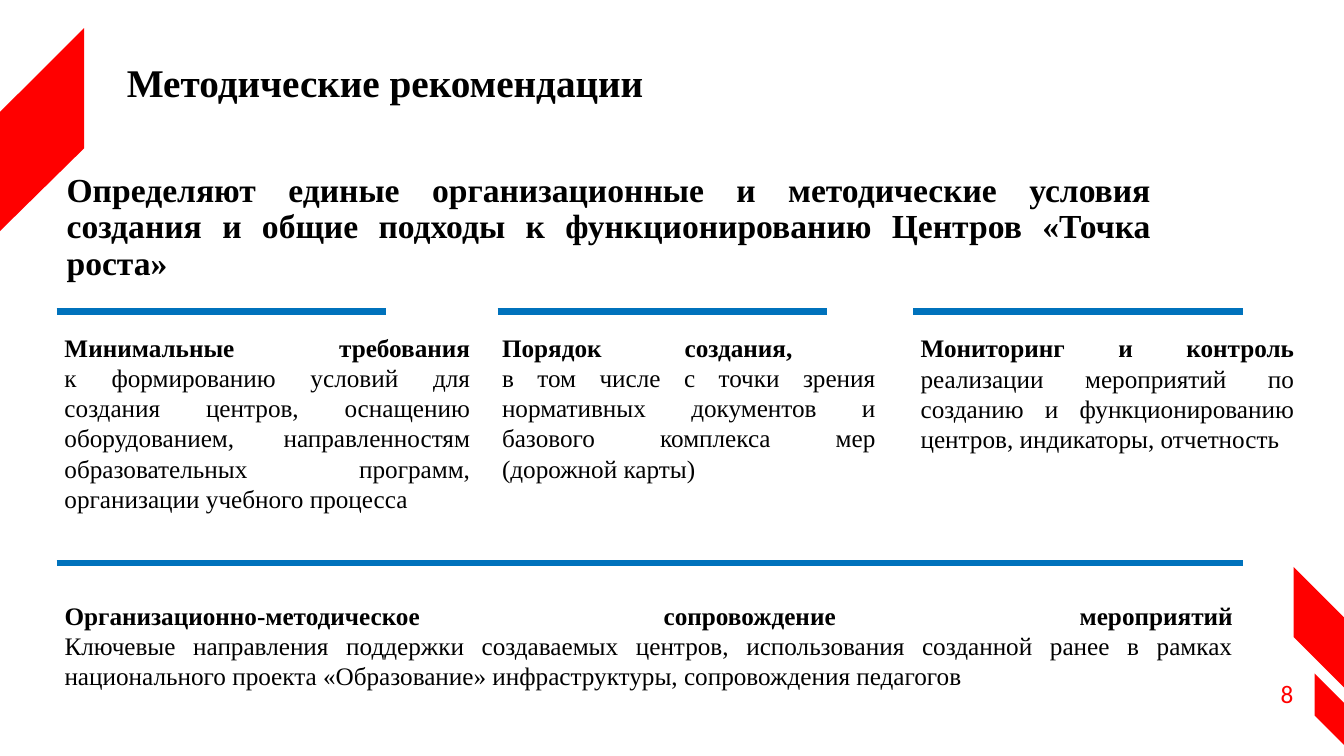
from dataclasses import dataclass

from lxml import etree
from pptx import Presentation
from pptx.dml.color import RGBColor
from pptx.enum.shapes import MSO_CONNECTOR
from pptx.enum.text import MSO_ANCHOR, PP_ALIGN
from pptx.oxml.ns import qn
from pptx.util import Pt

LEFT, RIGHT, JUSTIFY = PP_ALIGN.LEFT, PP_ALIGN.RIGHT, PP_ALIGN.JUSTIFY
TOP, MIDDLE = MSO_ANCHOR.TOP, MSO_ANCHOR.MIDDLE
STRAIGHT = MSO_CONNECTOR.STRAIGHT


@dataclass(frozen=True)
class Theme:
    ink: RGBColor = RGBColor(0, 0, 0)
    red: RGBColor = RGBColor(0xFF, 0, 0)
    blue: RGBColor = RGBColor(0x00, 0x72, 0xBC)
    serif: str = "Times New Roman"
    sans: str = "Calibri"
    title: float = 28
    lead: float = 24
    body: float = 18
    rule: float = 4.5


theme = Theme()

deck = Presentation()
deck.slide_width, deck.slide_height = Pt(960), Pt(540)
page = deck.slides.add_slide(deck.slide_layouts[6])


def add_text(place, spans, size, align=JUSTIFY, anchor=TOP, side=7.2,
             spacing=1.0, name=theme.serif, color=theme.ink):
    """Write one paragraph of (text, bold) spans; a newline is a line break."""
    box = page.shapes.add_textbox(*map(Pt, place))
    frame_format = {
        "word_wrap": True, "vertical_anchor": anchor,
        "margin_left": Pt(side), "margin_right": Pt(side),
        "margin_top": Pt(3.6), "margin_bottom": Pt(3.6),
    }
    for key, value in frame_format.items():
        setattr(box.text_frame, key, value)
    para = box.text_frame.paragraphs[0]
    para.alignment, para.line_spacing = align, spacing
    for text, bold in spans:
        span = para.add_run()
        span.text = text.rstrip("\n")
        font_format = {"name": name, "size": Pt(size), "bold": bold}
        for key, value in font_format.items():
            setattr(span.font, key, value)
        span.font.color.rgb = color
        if text.endswith("\n"):
            para.add_line_break()


# Red corner bands
bands = [
    [(0, 165), (0, 80), (60, 20), (59.5, 106)],
    [(960, 491), (924, 455), (924, 405), (960, 441)],
    [(960, 532), (939, 511), (939, 481), (960, 502.5)],
]
for start, *corners in bands:
    builder = page.shapes.build_freeform(*start, scale=Pt(1))
    builder.add_line_segments(corners, close=True)
    band = builder.convert_to_shape()
    band.shadow.inherit = False
    band.fill.solid()
    band.fill.fore_color.rgb = theme.red
    band.line.fill.background()

# Page number
add_text((891.5, 481, 36, 28.8), [("8", False)], theme.body, align=RIGHT,
         side=3.6, name=theme.sans, color=theme.red)

# Title and lead statement
add_text((87, 29, 628.5, 63), [("Методические рекомендации", True)],
         theme.title, align=LEFT, anchor=MIDDLE, side=3.6, spacing=0.9)
add_text((40.5, 120.5, 788.5, 126),
         [("Определяют единые организационные и методические условия создания "
           "и общие подходы к функционированию Центров «Точка роста»", True)],
         theme.lead, spacing=0.9)

# Three columns and the closing section
sections = [
    ((39, 233.5, 304, 126), "Минимальные требования\n",
     "к формированию условий для создания центров, оснащению оборудованием, "
     "направленностям образовательных программ, организации учебного процесса"),
    ((351.5, 233.5, 281, 110), "Порядок создания, \n",
     "в том числе с точки зрения нормативных документов и базового комплекса "
     "мер (дорожной карты)"),
    ((650.5, 234, 281, 143), "Мониторинг и контроль ",
     "реализации мероприятий по созданию и функционированию центров, "
     "индикаторы, отчетность"),
    ((39, 425, 849, 56), "Организационно-методическое сопровождение мероприятий\n",
     "Ключевые направления поддержки создаваемых центров, использования "
     "созданной ранее в рамках национального проекта «Образование» "
     "инфраструктуры, сопровождения педагогов"),
]
for place, heading, details in sections:
    add_text(place, [(heading, True), (details, False)], theme.body)

# Blue rules above the sections
rules = [(40.5, 276, 222.5), (355.5, 591, 222.5), (652.5, 888, 222.5),
         (40.5, 888, 402)]
for left, right, height in rules:
    rule = page.shapes.add_connector(
        STRAIGHT, Pt(left), Pt(height), Pt(right), Pt(height))
    rule.line.color.rgb = theme.blue
    rule.line.width = Pt(theme.rule)
    etree.SubElement(rule._element.spPr, qn("a:effectLst"))

deck.save("out.pptx")
